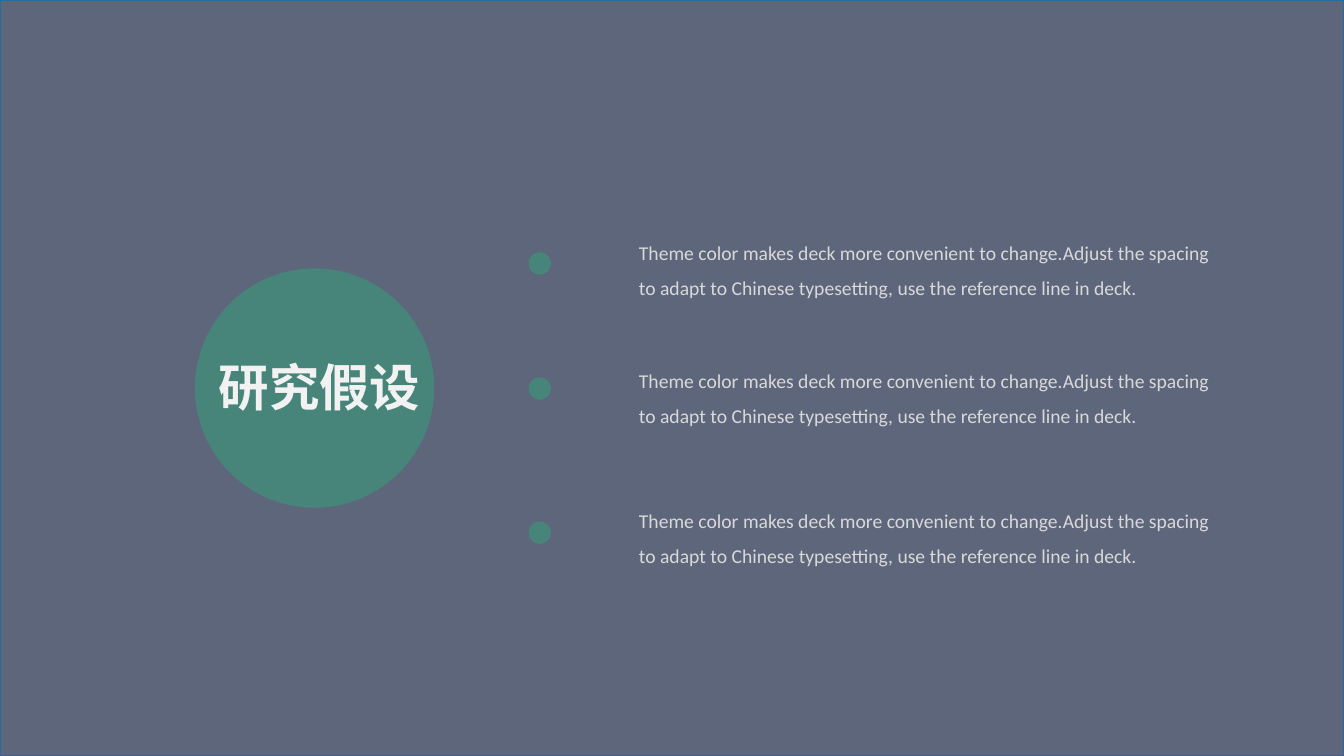
from pptx import Presentation
from pptx import util as u
from pptx.dml.color import RGBColor
from pptx.enum import shapes, text
from pptx.oxml import ns
from lxml import etree

NAVY = "192643"
BLUE = "226E9B"
GREEN = "47857A"
LIGHT = "D9D9D9"
WHITE = "F2F2F2"
HYPOTHESIS = (
    "Theme color makes deck more convenient to change.Adjust the spacing "
    "to adapt to Chinese typesetting, use the reference line in deck."
)


def color(hex_string):
    return RGBColor.from_string(hex_string)


def write(shape, words, *, font, size, ink, bold=False, spacing=1.0,
          anchor=text.MSO_ANCHOR.TOP, wrap=True,
          fit=text.MSO_AUTO_SIZE.NONE):
    frame = shape.text_frame
    frame.word_wrap = wrap
    frame.auto_size = fit
    frame.vertical_anchor = anchor
    paragraph = frame.paragraphs[0]
    paragraph.alignment = text.PP_ALIGN.LEFT
    paragraph.line_spacing = spacing
    run = paragraph.add_run()
    run.text = words
    run.font.name = font
    run.font.size = u.Pt(size)
    run.font.bold = bold
    run.font.color.rgb = color(ink)
    east_asian = etree.SubElement(run.font._element, ns.qn("a:ea"))
    east_asian.set("typeface", font)


class SlideBuilder:
    body_font = "Calibri"
    title_font = "Noto Sans CJK SC"

    def __init__(self, presentation):
        self.slide = presentation.slides.add_slide(presentation.slide_layouts[5])

    def shape(self, kind, left, top, width, height, fill, line, opacity=100):
        shape = self.slide.shapes.add_shape(
            kind, u.Pt(left), u.Pt(top), u.Pt(width), u.Pt(height))
        shape.shadow.inherit = False
        shape.fill.solid()
        shape.fill.fore_color.rgb = color(fill)
        shape.line.color.rgb = color(line)
        shape.line.width = u.Pt(1)
        if opacity < 100:
            tint = shape.element.spPr.find(
                ns.qn("a:solidFill")).find(ns.qn("a:srgbClr"))
            etree.SubElement(tint, ns.qn("a:alpha")).set("val", str(opacity * 1000))

    def backdrop(self, width, height):
        self.shape(shapes.MSO_SHAPE.RECTANGLE, 0, 0, width, height,
                   NAVY, BLUE, opacity=70)

    def circle(self, left, top, diameter):
        self.shape(shapes.MSO_SHAPE.OVAL, left, top, diameter, diameter,
                   GREEN, GREEN)

    def body(self, words, left, top, width, height):
        box = self.slide.shapes.add_textbox(
            u.Pt(left), u.Pt(top), u.Pt(width), u.Pt(height))
        write(box, words, font=self.body_font, size=14, ink=LIGHT,
              spacing=1.5, anchor=text.MSO_ANCHOR.MIDDLE)

    def title(self, words, left, top, width, height):
        title = self.slide.shapes.title
        title.left, title.top = u.Pt(left), u.Pt(top)
        title.width, title.height = u.Pt(width), u.Pt(height)
        write(title, words, font=self.title_font, size=36, ink=WHITE,
              bold=True, wrap=False, fit=text.MSO_AUTO_SIZE.SHAPE_TO_FIT_TEXT)
        title.element.getparent().append(title.element)


def main():
    presentation = Presentation()
    presentation.slide_width = u.Pt(960)
    presentation.slide_height = u.Pt(540)
    builder = SlideBuilder(presentation)
    builder.backdrop(960, 540)
    builder.circle(139.7, 192.2, 170)
    for text_top, dot_top in ((147.6, 180.7), (239, 270), (339.1, 373)):
        builder.body(HYPOTHESIS, 449.3, text_top, 422, 82)
        builder.circle(378, dot_top, 15)
    builder.title("研究假设", 149, 250.6, 160, 51)
    presentation.save("out.pptx")


if __name__ == "__main__":
    main()
